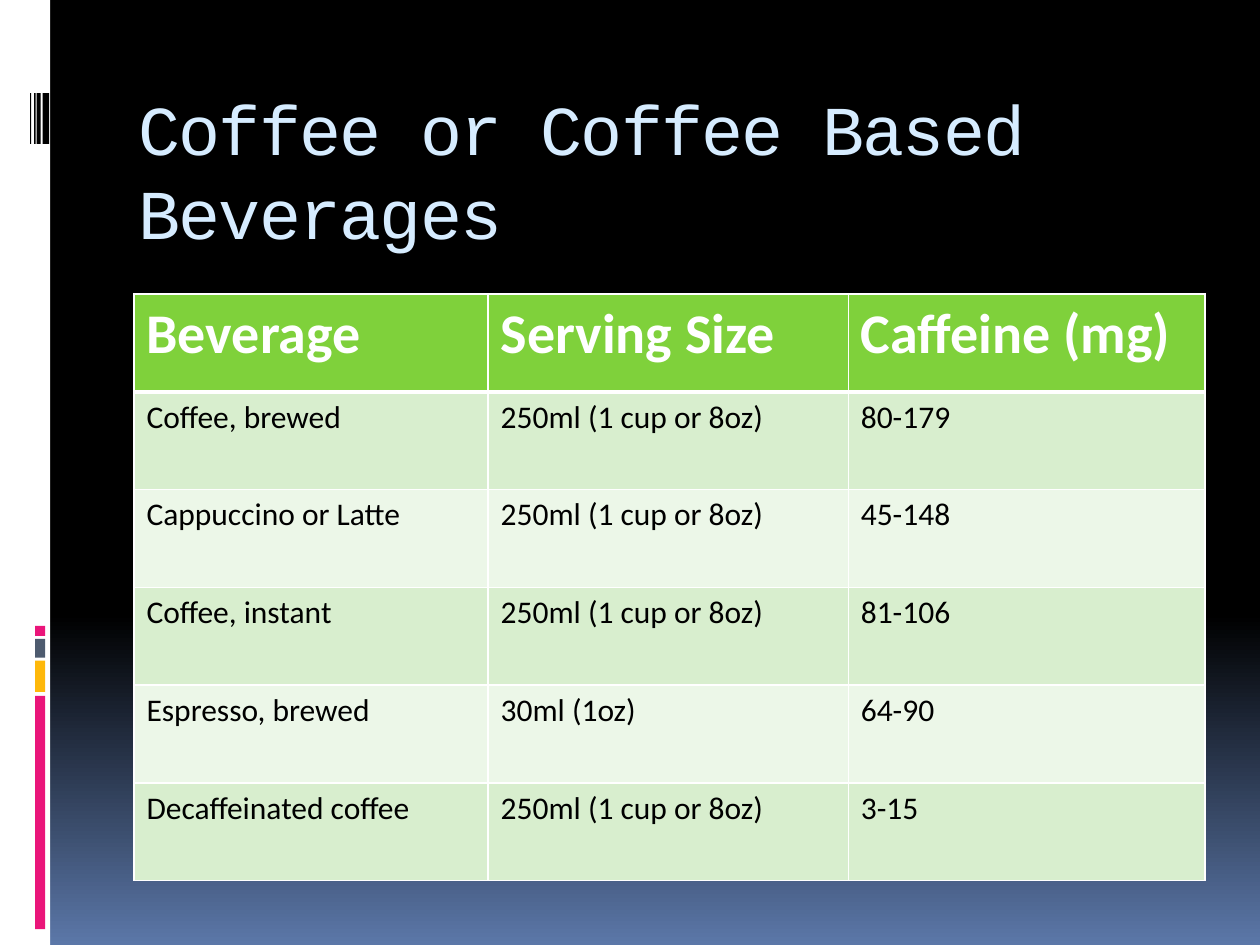
"""Builds a slide listing the caffeine content of coffee beverages."""
from copy import deepcopy
from typing import NamedTuple

from lxml import etree
from pptx import Presentation
from pptx import util as u
from pptx.dml.color import RGBColor
from pptx.enum import shapes
from pptx.oxml import ns

BLACK = RGBColor(0x00, 0x00, 0x00)
WHITE = RGBColor(0xFF, 0xFF, 0xFF)
DUSK = RGBColor(0x5B, 0x77, 0xA8)
PINK = RGBColor(0xEA, 0x15, 0x7A)
AMBER = RGBColor(0xFE, 0xB8, 0x0A)
SLATE = RGBColor(0x4E, 0x5B, 0x6F)
ICE = RGBColor(0xD6, 0xEC, 0xFF)
GREEN = RGBColor(0x7F, 0xD1, 0x3B)
PALE_GREEN = RGBColor(0xD8, 0xEE, 0xCE)
FAINT_GREEN = RGBColor(0xEC, 0xF7, 0xE8)


class Bar(NamedTuple):
    left: float
    top: float
    width: float
    height: float
    color: RGBColor


class Beverage(NamedTuple):
    name: str
    serving: str
    caffeine: str


class CellStyle(NamedTuple):
    size: int
    bold: bool
    color: RGBColor
    fill: RGBColor
    top_line: int
    bottom_line: int


CUP = "250ml (1 cup or 8oz)"
HEADINGS = Beverage("Beverage", "Serving Size", "Caffeine (mg)")
BEVERAGES = [
    Beverage("Coffee, brewed", CUP, "80-179"),
    Beverage("Cappuccino or Latte", CUP, "45-148"),
    Beverage("Coffee, instant", CUP, "81-106"),
    Beverage("Espresso, brewed", "30ml (1oz)", "64-90"),
    Beverage("Decaffeinated coffee", CUP, "3-15"),
]
COLUMN_WIDTHS = (7.14, 7.26, 7.19)
ROW_HEIGHT = 1.97

SIDEBAR = Bar(0, 0, 1.01, 19.05, WHITE)
ACCENTS = [
    Bar(0.71, top, 0.2, height, color)
    for top, height, color in (
        (14.03, 4.7, PINK), (13.32, 0.63, AMBER),
        (12.88, 0.38, SLATE), (12.62, 0.2, PINK))
]
BARCODE = [
    Bar(left, 1.88, width, 1.02, BLACK)
    for left, width in ((0.86, 0.13), (0.74, 0.08), (0.69, 0.03), (0.61, 0.02))
]


def paint_background(slide) -> None:
    fill = slide.background.fill
    fill.gradient()
    fill.gradient_angle = 270
    for stop, position, color in zip(fill.gradient_stops, (0.65, 1), (BLACK, DUSK)):
        stop.position = position
        stop.color.rgb = color
    first_stop = slide.element.find(".//" + ns.qn("a:gs"))
    start = deepcopy(first_stop)
    start.set("pos", "0")
    first_stop.addprevious(start)


def draw_bar(slide, bar: Bar) -> None:
    strip = slide.shapes.add_shape(
        shapes.MSO_SHAPE.RECTANGLE, *(u.Cm(length) for length in bar[:4]))
    strip.shadow.inherit = False
    strip.fill.solid()
    strip.fill.fore_color.rgb = bar.color
    strip.line.fill.background()


def draw_title(slide, wording: str) -> None:
    title = slide.shapes.add_textbox(u.Cm(2.54), u.Cm(1.59), u.Cm(21.59), u.Cm(3.6))
    title.text_frame.word_wrap = True
    paragraph = title.text_frame.paragraphs[0]
    paragraph.line_spacing = u.Pt(48)
    run = paragraph.add_run()
    run.text = wording
    run.font.name = "Courier New"
    run.font.size = u.Pt(40)
    run.font.color.rgb = ICE
    run.font._element.set("spc", "-100")


def add_border(cell, side: str, width: int) -> None:
    properties = cell._tc.get_or_add_tcPr()
    line = etree.SubElement(properties, ns.qn(f"a:ln{side}"), w=str(u.Pt(width)))
    solid = etree.SubElement(line, ns.qn("a:solidFill"))
    etree.SubElement(solid, ns.qn("a:srgbClr"), val=str(WHITE))


def fill_cell(cell, wording: str, style: CellStyle) -> None:
    for side, width in zip("LRTB", (1, 1, style.top_line, style.bottom_line)):
        add_border(cell, side, width)
    cell.fill.solid()
    cell.fill.fore_color.rgb = style.fill
    run = cell.text_frame.paragraphs[0].add_run()
    run.text = wording
    run.font.name = "Calibri"
    run.font.size = u.Pt(style.size)
    run.font.bold = style.bold
    run.font.color.rgb = style.color


def row_style(index: int) -> CellStyle:
    if index == 0:
        return CellStyle(32, True, WHITE, GREEN, 1, 3)
    band = PALE_GREEN if index % 2 else FAINT_GREEN
    return CellStyle(18, False, BLACK, band, 3 if index == 1 else 1, 1)


def draw_table(slide, beverages: list[Beverage]) -> None:
    rows = [HEADINGS, *beverages]
    table = slide.shapes.add_table(
        len(rows), len(COLUMN_WIDTHS), u.Cm(2.7), u.Cm(5.93),
        u.Cm(sum(COLUMN_WIDTHS)), u.Cm(ROW_HEIGHT * len(rows))).table
    for column, width in zip(table.columns, COLUMN_WIDTHS):
        column.width = u.Cm(width)
    for index, beverage in enumerate(rows):
        table.rows[index].height = u.Cm(ROW_HEIGHT)
        for cell, wording in zip(table.rows[index].cells, beverage):
            fill_cell(cell, wording, row_style(index))


def main() -> None:
    deck = Presentation()
    deck.slide_width, deck.slide_height = u.Cm(25.4), u.Cm(19.05)
    slide = deck.slides.add_slide(deck.slide_layouts[6])
    paint_background(slide)
    for bar in (SIDEBAR, *ACCENTS, *BARCODE):
        draw_bar(slide, bar)
    draw_title(slide, "Coffee or Coffee Based Beverages")
    draw_table(slide, BEVERAGES)
    deck.save("out.pptx")


if __name__ == "__main__":
    main()
